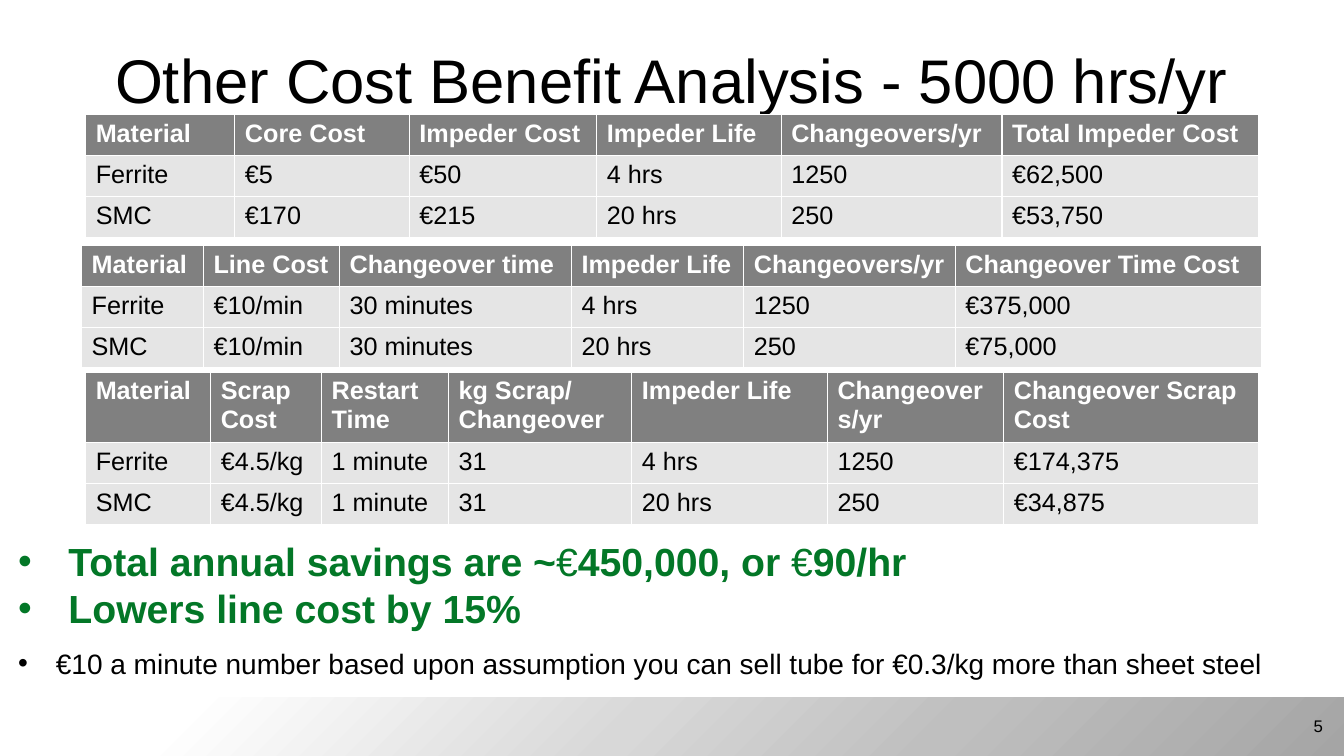
from dataclasses import dataclass

from lxml.etree import SubElement
from pptx import Presentation
from pptx.dml.color import RGBColor
from pptx.enum.shapes import MSO_SHAPE
from pptx.enum.text import MSO_ANCHOR, PP_ALIGN
from pptx.oxml import parse_xml
from pptx.oxml.ns import nsdecls, qn
from pptx.util import Pt


@dataclass(frozen=True)
class Theme:
    font: str = "Arial"
    black: str = "000000"
    white: str = "FFFFFF"
    green: str = "037727"
    header_fill: str = "808080"
    body_fill: str = "E5E5E5"
    band_stops: tuple = ((0, "A5A5A5"), (30, "BFBFBF"), (53, "D8D8D8"),
                         (86, "FFFFFF"), (100, "FFFFFF"))
    title_size: int = 44
    savings_size: int = 28
    note_size: int = 20
    table_size: int = 18
    number_size: int = 12


theme = Theme()


def add_run(paragraph, text, size, color, bold=False):
    run = paragraph.add_run()
    run.text = text
    font_format = {"name": theme.font, "size": Pt(size), "bold": bold}
    for name, value in font_format.items():
        setattr(run.font, name, value)
    run.font.color.rgb = RGBColor.from_string(color)


def add_text(box, paragraphs, size, color, indent=0, **frame_format):
    """Add a text box of paragraphs, each a list of (text, bold) runs, bulleted if indented."""
    text_frame = slide.shapes.add_textbox(*map(Pt, box)).text_frame
    text_frame.word_wrap = True
    alignment = frame_format.pop("alignment", PP_ALIGN.LEFT)
    for name, value in frame_format.items():
        setattr(text_frame, name, value)
    for index, runs in enumerate(paragraphs):
        paragraph = text_frame.add_paragraph() if index else text_frame.paragraphs[0]
        paragraph.alignment = alignment
        if indent:
            properties = paragraph._p.get_or_add_pPr()
            properties.set("marL", str(Pt(indent)))
            properties.set("indent", str(-Pt(indent)))
            bullet_color = SubElement(properties, qn("a:buClr"))
            SubElement(bullet_color, qn("a:srgbClr")).set("val", color)
            SubElement(properties, qn("a:buFont")).set("typeface", theme.font)
            SubElement(properties, qn("a:buChar")).set("char", "•")
        for text, bold in runs:
            add_run(paragraph, text, size, color, bold)


presentation = Presentation()
presentation.slide_width = Pt(960)
presentation.slide_height = Pt(540)
slide = presentation.slides.add_slide(presentation.slide_layouts[6])

# Footer band, shaded from its bottom right corner
band = slide.shapes.add_shape(MSO_SHAPE.RECTANGLE, Pt(0), Pt(498), Pt(960), Pt(42))
band.shadow.inherit = False
band.line.fill.background()
stops = "".join(
    f'<a:gs pos="{position * 1000}"><a:srgbClr val="{color}"/></a:gs>'
    for position, color in theme.band_stops)
band._element.spPr.find(qn("a:prstGeom")).addnext(parse_xml(
    f'<a:gradFill {nsdecls("a")} rotWithShape="1"><a:gsLst>{stops}</a:gsLst>'
    '<a:path path="circle"><a:fillToRect l="100000" t="100000"/></a:path></a:gradFill>'))

add_text((48, 21.6, 864, 90), [[("Other Cost Benefit Analysis - 5000 hrs/yr", False)]],
         theme.title_size, theme.black, alignment=PP_ALIGN.CENTER, margin_top=Pt(8))
add_text((728, 504, 224, 28.8), [[("5", False)]], theme.number_size, theme.black,
         alignment=PP_ALIGN.RIGHT, vertical_anchor=MSO_ANCHOR.MIDDLE)

# Cost tables: left, top, column widths, rows
row_height = 29.2
cost_tables = [
    (61.2, 82, (106.6, 124.6, 133.9, 131.8, 157.7, 183.6), [
        ("Material", "Core Cost", "Impeder Cost", "Impeder Life", "Changeovers/yr",
         "Total Impeder Cost"),
        ("Ferrite", "€5", "€50", "4 hrs", "1250", "€62,500"),
        ("SMC", "€170", "€215", "20 hrs", "250", "€53,750")]),
    (58.3, 175.3, (87.1, 97.2, 165.6, 123.1, 151.2, 218.9), [
        ("Material", "Line Cost", "Changeover time", "Impeder Life", "Changeovers/yr",
         "Changeover Time Cost"),
        ("Ferrite", "€10/min", "30 minutes", "4 hrs", "1250", "€375,000"),
        ("SMC", "€10/min", "30 minutes", "20 hrs", "250", "€75,000")]),
    (61.2, 265.7, (89.3, 79.2, 90.7, 131, 139.7, 126, 182.2), [
        ("Material", "Scrap Cost", "Restart Time", "kg Scrap/ Changeover", "Impeder Life",
         "Changeovers/yr", "Changeover Scrap Cost"),
        ("Ferrite", "€4.5/kg", "1 minute", "31", "4 hrs", "1250", "€174,375"),
        ("SMC", "€4.5/kg", "1 minute", "31", "20 hrs", "250", "€34,875")]),
]
for left, top, widths, rows in cost_tables:
    table = slide.shapes.add_table(
        len(rows), len(widths), Pt(left), Pt(top),
        Pt(sum(widths)), Pt(row_height * len(rows))).table
    table.horz_banding = False
    for column, width in zip(table.columns, widths):
        column.width = Pt(width)
    for row_index, row in enumerate(rows):
        is_header = row_index == 0
        table.rows[row_index].height = Pt(row_height)
        for column_index, text in enumerate(row):
            cell = table.cell(row_index, column_index)
            cell.fill.solid()
            cell.fill.fore_color.rgb = RGBColor.from_string(
                theme.header_fill if is_header else theme.body_fill)
            add_run(cell.text_frame.paragraphs[0], text, theme.table_size,
                    theme.white if is_header else theme.black, is_header)

savings = [
    [("Total annual savings are ~", True), ("€", False), ("450,000, or ", True),
     ("€", False), ("90/hr", True)],
    [("Lowers line cost by 15%", True)],
]
add_text((5.8, 380.2, 941.8, 74.9), savings, theme.savings_size, theme.green, indent=36)
note = ("€10 a minute number based upon assumption you can sell tube for "
        "€0.3/kg more than sheet steel")
add_text((5.8, 457.9, 941.8, 31.7), [[(note, False)]], theme.note_size, theme.black, indent=27)

presentation.save("out.pptx")
